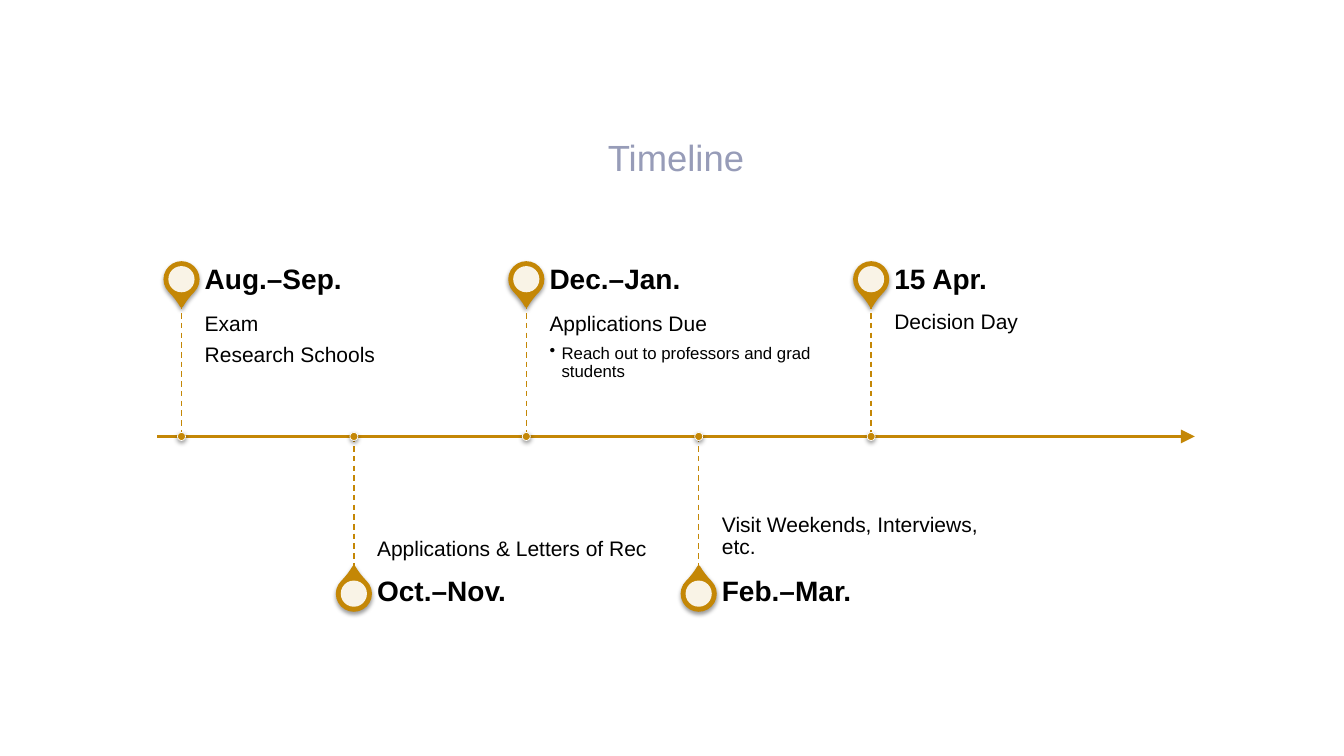
from lxml.etree import SubElement
from pptx import Presentation
from pptx.dml.color import RGBColor
from pptx.enum.dml import MSO_LINE
from pptx.enum.shapes import MSO_CONNECTOR, MSO_SHAPE
from pptx.enum.text import MSO_ANCHOR, PP_ALIGN
from pptx.oxml.ns import qn
from pptx.util import Inches, Pt

TITLE = "Timeline"
# (date, details); a detail starting with "•" is a bullet
MILESTONES = [
    ("Aug.–Sep.", ["Exam", "Research Schools"]),
    ("Oct.–Nov.", ["Applications & Letters of Rec"]),
    ("Dec.–Jan.", ["Applications Due", "•Reach out to professors and grad students"]),
    ("Feb.–Mar.", ["Visit Weekends, Interviews, etc."]),
    ("15 Apr.", ["Decision Day"]),
]

THEME = {
    "font": "Arial", "gold": "C48706", "white": "FFFFFF", "black": "000000", "title": "979CB8",
    "title_size": 26, "date_size": 20, "detail_size": 15, "bullet_size": 12,
}

AXIS_Y, AXIS_LEFT, AXIS_RIGHT = 4.33, 1.56, 11.85
FIRST_X, STEP_X = 1.8, 1.71
STEM, DATE_H, TEXT_W, TEXT_GAP = 1.32, 0.46, 2.85, 0.23
PIN, HOLE, DOT = 0.33, 0.26, 0.08
PIN_OFFSET = 1.56  # axis to pin centre

prs = Presentation()
prs.slide_width, prs.slide_height = Inches(13.33), Inches(7.5)
s = prs.slides.add_slide(prs.slide_layouts[6])


def color(name):
    return RGBColor.from_string(THEME[name])


def add_text(box, lines, size, ink="black", bold=False, anchor=MSO_ANCHOR.TOP,
             insets=(0, 0, 0, 0), align=PP_ALIGN.LEFT, spacing=0.9):
    """Put lines in a text box; insets run left, top, right, bottom."""
    tf = s.shapes.add_textbox(*map(Inches, box)).text_frame
    tf.word_wrap, tf.vertical_anchor = True, anchor
    for side, inset in zip(("left", "top", "right", "bottom"), insets):
        setattr(tf, f"margin_{side}", Inches(inset))
    for i, line in enumerate(lines):
        p = tf.add_paragraph() if i else tf.paragraphs[0]
        p.alignment, p.line_spacing = align, spacing
        if i:
            p.space_before = Pt(6)
        bullet = line.startswith("•")
        if bullet:
            pPr = p._p.get_or_add_pPr()
            pPr.set("marL", str(Inches(0.12)))
            pPr.set("indent", str(-Inches(0.12)))
            SubElement(pPr, qn("a:buChar"), char="•")
        r = p.add_run()
        r.text = line.lstrip("•")
        look = {"name": THEME["font"], "bold": bold,
                "size": Pt(THEME["bullet_size" if bullet else size])}
        for key, value in look.items():
            setattr(r.font, key, value)
        r.font.color.rgb = color(ink)


def add_line(start, end, width):
    sp = s.shapes.add_connector(MSO_CONNECTOR.STRAIGHT, *map(Inches, start + end))
    sp.line.color.rgb, sp.line.width = color("gold"), Pt(width)
    SubElement(sp._element.spPr, qn("a:effectLst"))
    return sp.line


def add_mark(kind, x, y, size, fill, line=None, width=0, shadow=False):
    """Draw a square-framed shape centred on x, y."""
    sp = s.shapes.add_shape(kind, *map(Inches, (x - size / 2, y - size / 2, size, size)))
    sp.fill.solid()
    sp.fill.fore_color.rgb = color(fill)
    if line:
        sp.line.color.rgb, sp.line.width = color(line), Pt(width)
    else:
        sp.line.fill.background()
    sp.shadow.inherit = False
    if shadow:
        effects = sp._element.spPr.find(qn("a:effectLst"))
        outer = SubElement(effects, qn("a:outerShdw"), blurRad=str(Pt(3.1)), dist=str(Pt(1.6)),
                           dir="5400000", algn="ctr", rotWithShape="0")
        ink = SubElement(outer, qn("a:srgbClr"), val=THEME["black"])
        SubElement(ink, qn("a:alpha"), val="38000")
    return sp


def add_milestone(x, above, date, details):
    sign = -1 if above else 1
    pin_y = AXIS_Y + sign * PIN_OFFSET
    pin = add_mark(MSO_SHAPE.TEAR, x, pin_y, PIN, "gold", "gold", 2, shadow=True)
    pin.adjustments[0] = 1.15
    pin.rotation = 135 if above else 315
    hole = add_mark(MSO_SHAPE.OVAL, x, pin_y, HOLE, "white")
    SubElement(hole._element.spPr.find(".//" + qn("a:srgbClr")), qn("a:alpha"), val="90000")

    left = x + TEXT_GAP
    detail_top = AXIS_Y - STEM if above else AXIS_Y
    date_top = detail_top - DATE_H if above else AXIS_Y + STEM
    add_text((left, detail_top, TEXT_W, STEM), details, "detail_size",
             anchor=MSO_ANCHOR.TOP if above else MSO_ANCHOR.BOTTOM,
             insets=(0, 0.1, 0.1, 0.16) if above else (0, 0.16, 0, 0.1))
    add_text((left, date_top, TEXT_W, DATE_H), [date], "date_size", bold=True,
             anchor=MSO_ANCHOR.MIDDLE, insets=(0, 0, 0.14, 0))

    ends = sorted((AXIS_Y, AXIS_Y + sign * STEM))
    add_line((x, ends[0]), (x, ends[1]), 1).dash_style = MSO_LINE.DASH
    add_mark(MSO_SHAPE.OVAL, x, AXIS_Y, DOT, "gold", "white", 0.5, shadow=True)


add_text((1.2, 0.87, 11.01, 1), [TITLE], "title_size", "title", anchor=MSO_ANCHOR.BOTTOM,
         insets=(0.1,) * 4, align=PP_ALIGN.CENTER, spacing=1.0)
axis = add_line((AXIS_LEFT, AXIS_Y), (AXIS_RIGHT, AXIS_Y), 1.5)
SubElement(axis._get_or_add_ln(), qn("a:tailEnd"), type="triangle", w="lg", len="lg")
for i, (date, details) in enumerate(MILESTONES):
    add_milestone(FIRST_X + i * STEP_X, i % 2 == 0, date, details)

prs.save("out.pptx")
